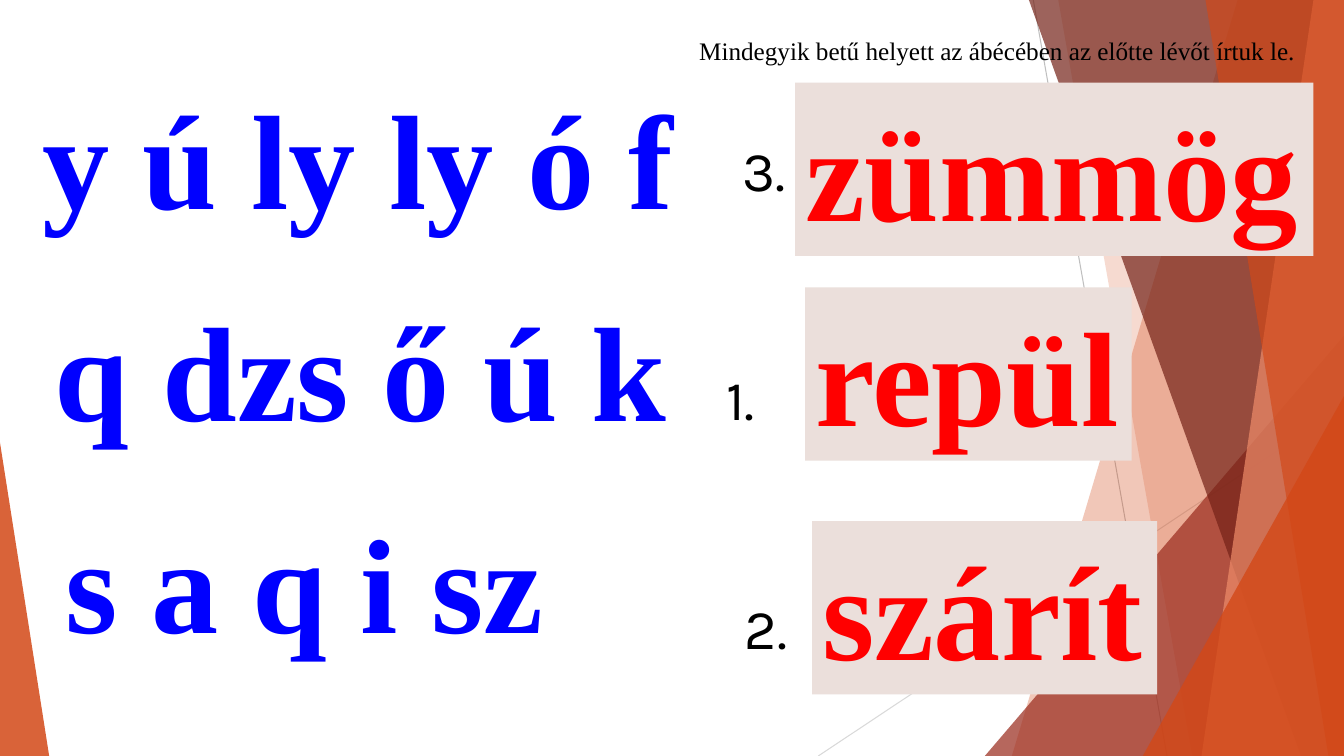
from lxml import etree
from pptx import Presentation
from pptx import util as u
from pptx.dml import color
from pptx.enum import shapes, text
from pptx.oxml import ns

WIDTH, HEIGHT = 33.87, 19.05
SERIF, SANS = "Times New Roman", "Karla"
ROW_TOP, ROW_PITCH, WORD_HEIGHT = 1.78, 5.33, 4.37
NUMBER_TOP, NUMBER_PITCH = 3.28, 5.77

# code left, code width, number, number left, answer, answer left, width, drop
RIDDLES = [
    (("y ú ly ly ó f", 0.81, 16.56), ("3.", 18.47), ("zümmög", 20.04, 13.06, 0.3)),
    (("q dzs ő ú k", 1.12, 16.94), ("1.", 18.06), ("repül", 20.29, 8.23, 0.13)),
    (("s a q i sz", 1.4, 13.54), ("2.", 18.52), ("szárít", 20.47, 8.69, 0.69)),
]


def rgb(hex_code):
    """Turn a hex string into a colour."""
    return color.RGBColor.from_string(hex_code)


def paint(part, hex_code, opacity=100):
    """Give a shape a plain fill with no outline or shadow."""
    part.shadow.inherit = False
    part.line.fill.background()
    part.fill.solid()
    part.fill.fore_color.rgb = rgb(hex_code)
    if opacity < 100:
        tint = part.fill._xPr.find(".//" + ns.qn("a:srgbClr"))
        etree.SubElement(tint, ns.qn("a:alpha")).set("val", str(opacity * 1000))


def add_ray(slide, start, end, hex_code):
    """Draw one thin background line."""
    ray = slide.shapes.add_connector(
        shapes.MSO_CONNECTOR.STRAIGHT, *(u.Cm(v) for v in start + end))
    ray.line.color.rgb = rgb(hex_code)
    ray.line.width = u.Pt(0.75)
    etree.SubElement(ray._element.spPr, ns.qn("a:effectLst"))


def add_facet(slide, top_x, bottom_x, hex_code, opacity):
    """Draw a full-height facet that reaches the right slide edge."""
    corners = [(WIDTH, 0), (WIDTH, HEIGHT), (bottom_x, HEIGHT)]
    outline = slide.shapes.build_freeform(u.Cm(top_x), 0)
    outline.add_line_segments([(u.Cm(x), u.Cm(y)) for x, y in corners])
    paint(outline.convert_to_shape(), hex_code, opacity)


def add_corner(slide, left, top, right, apex, hex_code, opacity):
    """Draw a triangle standing on the bottom slide edge."""
    corner = slide.shapes.add_shape(
        shapes.MSO_SHAPE.ISOSCELES_TRIANGLE,
        u.Cm(left), u.Cm(top), u.Cm(right - left), u.Cm(HEIGHT - top))
    corner.adjustments[0] = apex
    paint(corner, hex_code, opacity)


def add_backdrop(slide):
    """Draw the faceted decoration on both slide edges."""
    add_ray(slide, (26.04, 0), (29.41, HEIGHT), "BFBFBF")
    add_ray(slide, (WIDTH, 10.24), (20.62, HEIGHT), "D9D9D9")
    add_facet(slide, 31.19, 25.5, "D34817", 30)
    add_facet(slide, 26.67, 30.05, "D34817", 20)
    add_corner(slide, 24.82, 8.46, WIDTH, 1, "9B2D1F", 72)
    add_facet(slide, 25.93, 32.79, "742217", 70)
    add_facet(slide, 33.1, 30.28, "EF8C6A", 70)
    add_facet(slide, 30.38, 33.48, "D34817", 65)
    add_corner(slide, 28.8, 9.98, WIDTH, 1, "D34817", 80)
    add_corner(slide, 0, 11.15, 1.24, 0, "D34817", 85)


def add_words(slide, box, words, size, hex_code, font=SERIF, bold=False, back=None):
    """Write one line of text in a box, on a panel if a back colour is given."""
    place = [u.Cm(v) for v in box]
    if back:
        holder = slide.shapes.add_shape(shapes.MSO_SHAPE.RECTANGLE, *place)
        paint(holder, back)
    else:
        holder = slide.shapes.add_textbox(*place)
    frame = holder.text_frame
    frame.word_wrap = False
    frame.auto_size = text.MSO_AUTO_SIZE.SHAPE_TO_FIT_TEXT
    frame.vertical_anchor = text.MSO_ANCHOR.TOP
    line = frame.paragraphs[0]
    line.alignment = text.PP_ALIGN.LEFT
    run = line.add_run()
    run.text = words
    run.font.name = font
    run.font.size = u.Pt(size)
    run.font.bold = bold
    run.font.color.rgb = rgb(hex_code)
    return line


def add_riddle(slide, row, code, number, answer):
    """Place a coded word, its number and its solution in one row."""
    top = ROW_TOP + row * ROW_PITCH
    letters, code_left, code_width = code
    add_words(slide, (code_left, top, code_width, WORD_HEIGHT),
              letters, 96, "0000FF", bold=True)
    word, word_left, word_width, drop = answer
    add_words(slide, (word_left, top + drop, word_width, WORD_HEIGHT),
              word, 96, "FF0000", bold=True, back="EBDFDB")
    label, label_left = number
    add_words(slide, (label_left, NUMBER_TOP + row * NUMBER_PITCH, 1.78, 1.96),
              label, 40, "000000", font=SANS)


def main():
    """Build and save the slide."""
    deck = Presentation()
    deck.slide_width, deck.slide_height = u.Cm(WIDTH), u.Cm(HEIGHT)
    slide = deck.slides.add_slide(deck.slide_layouts[6])
    add_backdrop(slide)
    instruction = add_words(
        slide, (17.37, 0.66, 15.85, 1.14),
        "Mindegyik betű helyett az ábécében az előtte lévőt írtuk le.", 18, "000000")
    instruction.line_spacing = 1.15
    for row, riddle in enumerate(RIDDLES):
        add_riddle(slide, row, *riddle)
    deck.save("out.pptx")


if __name__ == "__main__":
    main()
